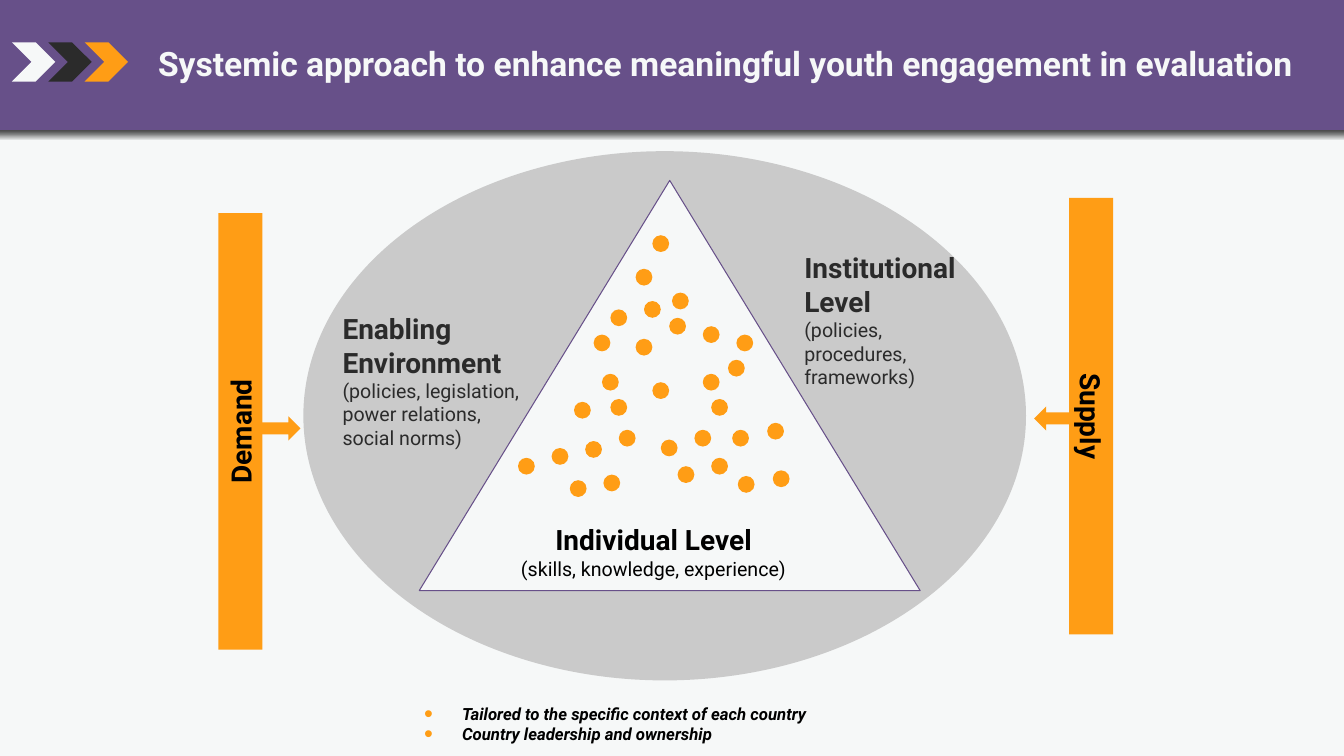
from dataclasses import dataclass

from lxml.etree import SubElement
from pptx import Presentation
from pptx.dml.color import RGBColor
from pptx.enum.shapes import MSO_SHAPE as Shape
from pptx.enum.text import MSO_ANCHOR as Anchor, PP_ALIGN as Align
from pptx.oxml.ns import qn
from pptx.util import Pt


@dataclass(frozen=True)
class Theme:
    font: str = "Roboto"
    purple: str = "675089"
    orange: str = "FF9D15"
    grey: str = "CACACA"
    paper: str = "F6F8F8"
    dark: str = "2B2B2B"
    black: str = "000000"
    title: int = 24
    heading: int = 20
    detail: int = 14
    note: int = 12


theme = Theme()
deck = Presentation()
deck.slide_width, deck.slide_height = Pt(960), Pt(540)
page = deck.slides.add_slide(deck.slide_layouts[6])
page.background.fill.solid()
page.background.fill.fore_color.rgb = RGBColor.from_string(theme.paper)


def add_filled(parent, kind, frame, color, rotation=0):
    """Add a preset shape without outline or shadow to a slide or group."""
    shape = parent.shapes.add_shape(kind, *[Pt(length) for length in frame])
    shape.shadow.inherit = False
    shape.fill.solid()
    shape.fill.fore_color.rgb = RGBColor.from_string(color)
    shape.line.fill.background()
    shape.rotation = rotation
    return shape


def write_lines(box, lines, color, align=Align.LEFT):
    """Fill a shape with paragraphs given as (text, size, bold)."""
    frame = box.text_frame
    frame.word_wrap = True
    for index, (text, size, bold) in enumerate(lines):
        para = frame.paragraphs[0] if index == 0 else frame.add_paragraph()
        para.text = text
        para.alignment = align
        para.font.name = theme.font
        para.font.size = Pt(size)
        para.font.bold = bold
        para.font.color.rgb = RGBColor.from_string(color)
    return frame


# Title band with a soft shadow below it
band = add_filled(page, Shape.RECTANGLE, (-15, -13, 986, 105.8), theme.purple)
effects = band._element.spPr.find(qn("a:effectLst"))
shadow = SubElement(effects, qn("a:outerShdw"), blurRad=str(Pt(4)), dist=str(Pt(3)),
                    dir=str(69 * 60000), algn="t", rotWithShape="0")
shadow_color = SubElement(shadow, qn("a:srgbClr"), val=theme.black)
SubElement(shadow_color, qn("a:alpha"), val="69000")

# Levels: the ellipse surrounds the triangle
add_filled(page, Shape.OVAL, (216.7, 108, 516.2, 378), theme.grey)
triangle = add_filled(page, Shape.ISOSCELES_TRIANGLE, (299.5, 128.9, 357.8, 293), theme.paper)
triangle.line.color.rgb = RGBColor.from_string(theme.purple)
triangle.line.width = Pt(0.75)

levels = [
    ((361.4, 370, 211, 48.2), "Individual Level",
     "(skills, knowledge, experience)", theme.black, Align.CENTER),
    ((567.4, 175.7, 133.2, 106.6), "Institutional Level",
     "(policies, procedures, frameworks)", theme.dark, Align.LEFT),
    ((237.6, 218.9, 141.8, 106.6), "Enabling Environment",
     "(policies, legislation, power relations, social norms)", theme.dark, Align.LEFT),
]
for frame, heading, detail, color, align in levels:
    level = page.shapes.add_textbox(*[Pt(length) for length in frame])
    write_lines(level, [(heading, theme.heading, True), (detail, theme.detail, False)],
                color, align)

# Individuals scattered inside the triangle
individuals = [
    (466, 168), (454, 192), (480, 209), (460, 215), (436, 221), (478, 227),
    (502, 233), (424, 239), (526, 239), (454, 242), (520, 257), (430, 267),
    (502, 267), (466, 273), (436, 285), (508, 285), (410, 287), (548, 302),
    (442, 307), (496, 307), (523, 307), (472, 314), (418, 315), (394, 320),
    (370, 327), (508, 327), (484, 333), (552, 336), (431, 339), (527, 340),
    (407, 343),
]
crowd = page.shapes.add_group_shape()
for left, top in individuals:
    add_filled(crowd, Shape.OVAL, (left, top, 12, 12), theme.orange)

# Demand and supply push inwards from both sides
forces = [
    ("Demand", (15.8, 292.3, 311.8, 31.5), 270, (187.2, 297.4, 27.4, 17.3), 0),
    ("Supply", (623.5, 281.5, 311.8, 31.5), 90, (738.7, 290.2, 27.4, 17.3), 180),
]
for name, bar_frame, bar_turn, arrow_frame, arrow_turn in forces:
    bar = add_filled(page, Shape.RECTANGLE, bar_frame, theme.orange, bar_turn)
    write_lines(bar, [(name, theme.heading, True)], theme.black, Align.CENTER)
    bar.text_frame.vertical_anchor = Anchor.MIDDLE
    add_filled(page, Shape.RIGHT_ARROW, arrow_frame, theme.orange, arrow_turn)

# Bulleted principles
principles = page.shapes.add_textbox(Pt(295.9), Pt(499), Pt(435.6), Pt(36))
principle_lines = [
    ("Tailored to the specific context of each country", theme.note, True),
    ("Country leadership and ownership", theme.note, True),
]
for para in write_lines(principles, principle_lines, theme.black).paragraphs:
    para.font.italic = True
    properties = para._p.get_or_add_pPr()
    properties.set("marL", str(Pt(27)))
    properties.set("indent", str(-Pt(27)))
    bullet_color = properties.makeelement(qn("a:buClr"))
    SubElement(bullet_color, qn("a:srgbClr"), val=theme.orange)
    bullet_size = properties.makeelement(qn("a:buSzPct"), val="150000")
    bullet_font = properties.makeelement(qn("a:buFont"), typeface="Arial")
    bullet = properties.makeelement(qn("a:buChar"), char="•")
    for position, part in enumerate([bullet_color, bullet_size, bullet_font, bullet]):
        properties.insert(position, part)

# Title and its chevrons
title = page.shapes.add_textbox(Pt(105.8), Pt(27.4), Pt(834.5), Pt(36))
write_lines(title, [("Systemic approach to enhance meaningful youth engagement in evaluation",
                     theme.title, True)], theme.paper)
chevrons = page.shapes.add_group_shape()
for step, color in enumerate([theme.orange, theme.dark, theme.paper]):
    add_filled(chevrons, Shape.CHEVRON, (60.5 - 26 * step, 30.2, 31, 28.1), color)

deck.save("out.pptx")
